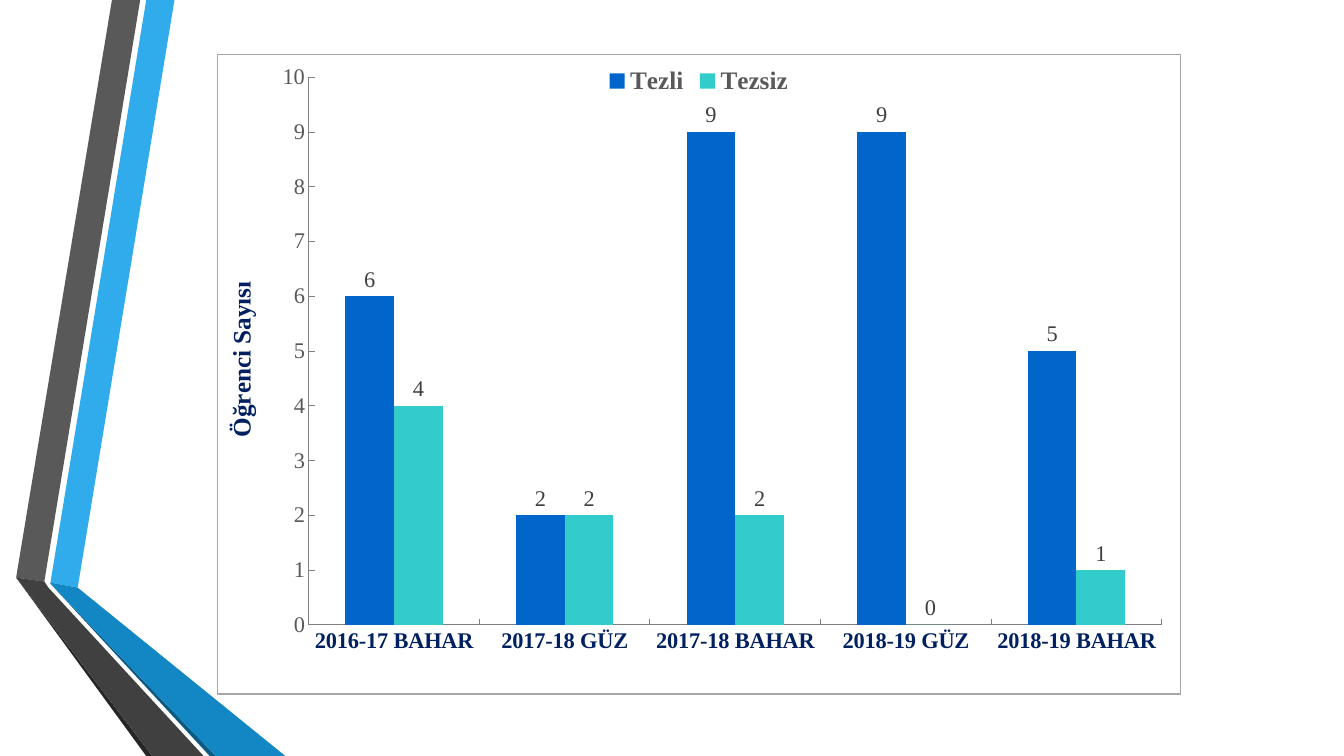
from lxml import etree
from pptx import Presentation
from pptx.chart.data import CategoryChartData
from pptx.dml.color import RGBColor
from pptx.enum.chart import XL_CHART_TYPE, XL_LABEL_POSITION, XL_LEGEND_POSITION, XL_TICK_MARK
from pptx.oxml import parse_xml
from pptx.oxml.ns import nsdecls, qn
from pptx.util import Inches, Pt

SLIDE_WIDTH = Inches(13.33)
SLIDE_HEIGHT = Inches(7.5)
SERIF = "Times New Roman"

SKY = RGBColor(0x30, 0xAC, 0xEC)
OCEAN = RGBColor(0x12, 0x87, 0xC3)
DEEP_OCEAN = RGBColor(0x0C, 0x5A, 0x82)
GREY = RGBColor(0x59, 0x59, 0x59)
CHARCOAL = RGBColor(0x40, 0x40, 0x40)
NEAR_BLACK = RGBColor(0x26, 0x26, 0x26)
AXIS_GREY = RGBColor(0x80, 0x80, 0x80)
BORDER_GREY = RGBColor(0xA6, 0xA6, 0xA6)
NAVY = RGBColor(0x00, 0x20, 0x60)
BLUE = RGBColor(0x00, 0x66, 0xCC)
TURQUOISE = RGBColor(0x33, 0xCC, 0xCC)
BLACK = RGBColor(0, 0, 0)

# Ribbon corners in percent of the slide's width and height, back to front
RIBBONS = [
    (SKY, [(3.75, 77.07), (5.78, 77.73), (12.98, 0), (10.88, 0)]),
    (GREY, [(10.43, 0), (8.33, 0), (1.2, 76.4), (3.3, 76.93)]),
    (NEAR_BLACK, [(1.2, 76.4), (10.88, 100), (11.33, 100)]),
    (DEEP_OCEAN, [(3.75, 77.2), (15.6, 100), (16.05, 100)]),
    (OCEAN, [(3.75, 77.07), (3.75, 77.2), (16.05, 100), (21.23, 100), (5.78, 77.73)]),
    (CHARCOAL, [(15.15, 100), (3.6, 77.73), (3.3, 76.93), (1.2, 76.4), (11.33, 100)]),
]

SEMESTERS = ["2016-17 BAHAR", "2017-18 GÜZ", "2017-18 BAHAR", "2018-19 GÜZ", "2018-19 BAHAR"]
STUDENTS = [("Tezli", [6, 2, 9, 9, 5], BLUE), ("Tezsiz", [4, 2, 2, 0, 1], TURQUOISE)]
PLOT_LAYOUT = {"x": 0.095, "y": 0.035, "w": 0.886, "h": 0.857}


def across(percent):
    return round(SLIDE_WIDTH * percent / 100)


def down(percent):
    return round(SLIDE_HEIGHT * percent / 100)


def add_ribbon(slide, color, corners):
    points = [(across(x), down(y)) for x, y in corners]
    builder = slide.shapes.build_freeform(*points[0])
    builder.add_line_segments(points[1:], close=True)
    shape = builder.convert_to_shape()
    shape.shadow.inherit = False
    shape.fill.solid()
    shape.fill.fore_color.rgb = color
    shape.line.fill.background()


def style_font(font, size, color, bold=False, name=SERIF):
    font.size = Pt(size)
    font.color.rgb = color
    font.bold = bold
    font.name = name


def style_axis(axis, color, bold=False):
    axis.has_major_gridlines = False
    axis.major_tick_mark = XL_TICK_MARK.INSIDE
    axis.minor_tick_mark = XL_TICK_MARK.NONE
    axis.format.line.color.rgb = AXIS_GREY
    axis.format.line.width = Pt(0.75)
    style_font(axis.tick_labels.font, 16, color, bold)


def style_series(series, color):
    series.format.fill.solid()
    series.format.fill.fore_color.rgb = color
    series.invert_if_negative = False
    labels = series.data_labels
    labels.show_value = True
    labels.position = XL_LABEL_POSITION.OUTSIDE_END
    style_font(labels.font, 16, CHARCOAL)


def place_plot(chart):
    """Fix the inner plot area at PLOT_LAYOUT, in shares of the chart."""
    plot_area = chart.element.find(".//" + qn("c:plotArea"))
    for layout in plot_area.findall(qn("c:layout")):
        plot_area.remove(layout)
    layout = etree.Element(qn("c:layout"))
    manual = etree.SubElement(layout, qn("c:manualLayout"))
    settings = {"layoutTarget": "inner", "xMode": "edge", "yMode": "edge", **PLOT_LAYOUT}
    for tag, value in settings.items():
        etree.SubElement(manual, qn("c:" + tag)).set("val", str(value))
    plot_area.insert(0, layout)


def add_border(chart):
    border = parse_xml(
        f'<c:spPr {nsdecls("c", "a")}><a:noFill/><a:ln w="{Pt(0.75)}"><a:solidFill>'
        f'<a:srgbClr val="{BORDER_GREY}"/></a:solidFill></a:ln></c:spPr>'
    )
    chart.element.find(qn("c:chart")).addnext(border)


def add_student_chart(slide):
    data = CategoryChartData()
    data.categories = SEMESTERS
    for name, values, _ in STUDENTS:
        data.add_series(name, values)
    chart = slide.shapes.add_chart(
        XL_CHART_TYPE.COLUMN_CLUSTERED,
        across(16.13), down(7.2), across(71.72), down(84.67), data,
    ).chart
    style_font(chart.font, 10, BLACK, name="Calibri")
    chart.has_title = False

    chart.has_legend = True
    chart.legend.position = XL_LEGEND_POSITION.TOP
    chart.legend.include_in_layout = False
    style_font(chart.legend.font, 18, GREY, bold=True)

    plot = chart.plots[0]
    plot.gap_width = 150
    plot.overlap = 0
    plot.vary_by_categories = False
    for series, (_, _, color) in zip(plot.series, STUDENTS):
        style_series(series, color)

    style_axis(chart.category_axis, NAVY, bold=True)
    value_axis = chart.value_axis
    style_axis(value_axis, GREY)
    value_axis.minimum_scale = 0
    value_axis.maximum_scale = 10
    value_axis.major_unit = 1
    title = value_axis.axis_title.text_frame
    title.text = "Öğrenci Sayısı"
    style_font(title.paragraphs[0].font, 18, NAVY, bold=True)

    place_plot(chart)
    add_border(chart)


def main():
    presentation = Presentation()
    presentation.slide_width = SLIDE_WIDTH
    presentation.slide_height = SLIDE_HEIGHT
    slide = presentation.slides.add_slide(presentation.slide_layouts[6])
    for color, corners in RIBBONS:
        add_ribbon(slide, color, corners)
    add_student_chart(slide)
    presentation.save("out.pptx")


if __name__ == "__main__":
    main()
